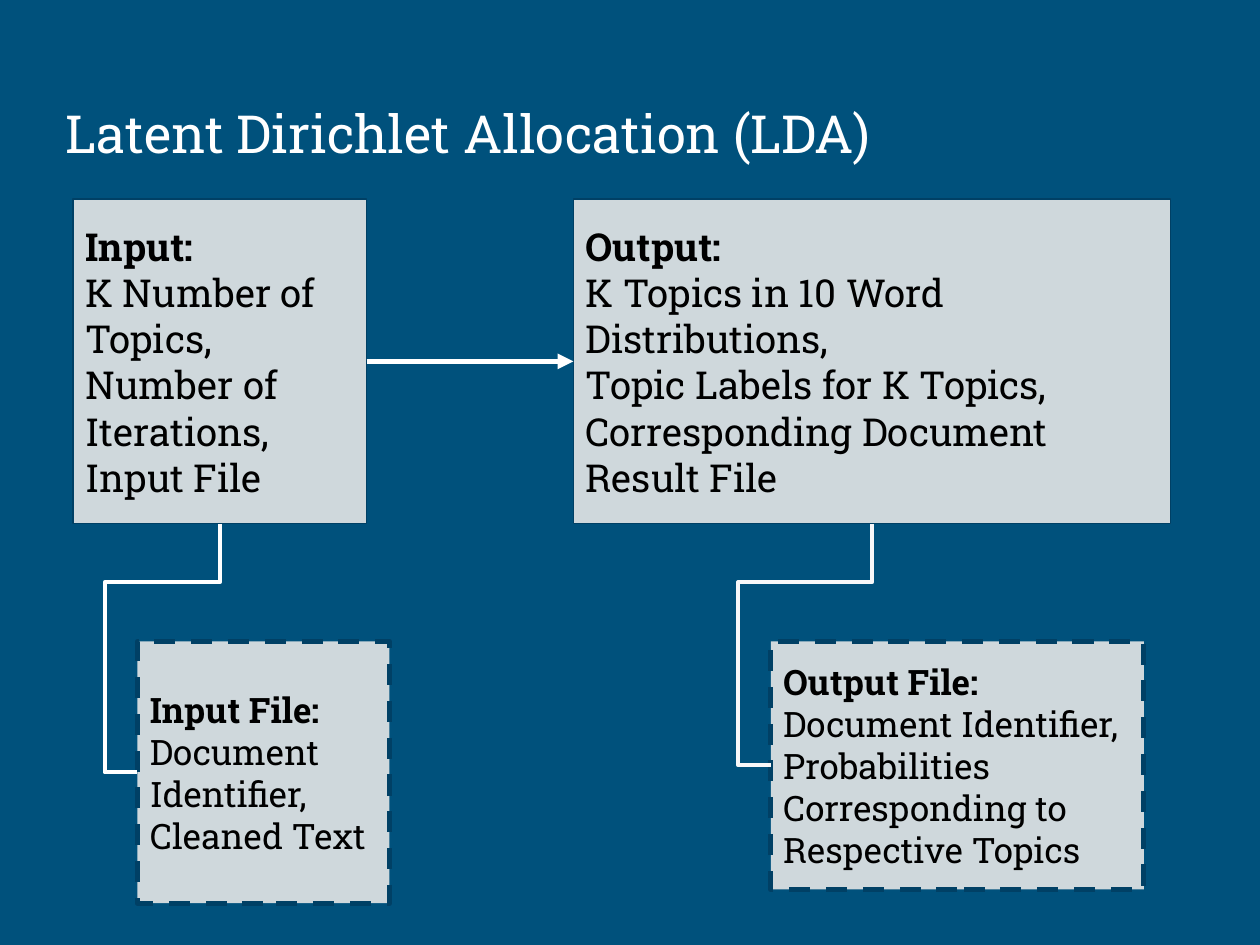
from lxml.etree import SubElement
from pptx import Presentation
from pptx.dml.color import RGBColor
from pptx.enum.dml import MSO_LINE
from pptx.enum.shapes import MSO_CONNECTOR, MSO_SHAPE
from pptx.enum.text import MSO_ANCHOR, MSO_AUTO_SIZE, PP_ALIGN
from pptx.oxml.ns import qn
from pptx.util import Cm, Pt

COLOURS = {
    "background": "00517C",
    "panel": "CFD8DC",
    "border": "004065",
    "text": "000000",
    "white": "FFFFFF",
    "off_white": "F7F7F9",
}
FONT = "Roboto Slab"
BOTTOM, LEFT, RIGHT = 2, 1, 3
ELBOW_DROP, ELBOW_REACH = Cm(1.18), Cm(0.66)
STEP_TOP, STEP_HEIGHT, FILE_TOP = 4.01, 6.55, 12.93


def colour(name):
    """Return the named colour."""
    return RGBColor.from_string(COLOURS[name])


def apply_format(target, values):
    """Set each attribute of the target from a dict of values."""
    for attribute, value in values.items():
        setattr(target, attribute, value)


def format_frame(frame, anchor):
    """Give a text frame its wrapping, margins and anchor."""
    margins = {f"margin_{side}": Cm(0.25) for side in ("left", "top", "right", "bottom")}
    apply_format(frame, {"word_wrap": True, "auto_size": MSO_AUTO_SIZE.NONE,
                         "vertical_anchor": anchor, **margins})


def write_paragraph(paragraph, words, size, ink, bold=False):
    """Write one left-aligned paragraph."""
    paragraph.text = words
    paragraph.alignment = PP_ALIGN.LEFT
    font = paragraph.runs[0].font
    apply_format(font, {"name": FONT, "size": Pt(size), "bold": bold})
    font.color.rgb = colour(ink)


def add_title(slide, words):
    """Place and fill the title placeholder."""
    title = slide.shapes.title
    apply_format(title, {"left": Cm(1.07), "top": Cm(1.02),
                         "width": Cm(23.24), "height": Cm(2.54)})
    format_frame(title.text_frame, MSO_ANCHOR.BOTTOM)
    write_paragraph(title.text_frame.paragraphs[0], words, 30, "white")


def add_panel(slide, box, lines, size, border):
    """Add a panel with a bold heading above its details."""
    panel = slide.shapes.add_shape(MSO_SHAPE.RECTANGLE, *map(Cm, box))
    panel.shadow.inherit = False
    panel.fill.solid()
    panel.fill.fore_color.rgb = colour("panel")
    panel.line.color.rgb = colour("border")
    apply_format(panel.line, border)
    frame = panel.text_frame
    format_frame(frame, MSO_ANCHOR.MIDDLE)
    for index, words in enumerate(lines):
        paragraph = frame.add_paragraph() if index else frame.paragraphs[0]
        write_paragraph(paragraph, words, size, "text", bold=index == 0)
    return panel


def add_link(slide, style, source, source_site, target, target_site, ink, width):
    """Join two panels with a connector."""
    link = slide.shapes.add_connector(style, 0, 0, 0, 0)
    link.begin_connect(source, source_site)
    link.end_connect(target, target_site)
    link.line.color.rgb = colour(ink)
    link.line.width = Pt(width)
    SubElement(link._element.spPr, qn("a:effectLst"))
    return link


def add_arrow(slide, source, target):
    """Add a straight arrow from one panel to the next."""
    arrow = add_link(slide, MSO_CONNECTOR.STRAIGHT, source, RIGHT, target, LEFT, "white", 3)
    SubElement(arrow.line._get_or_add_ln(), qn("a:tailEnd"), type="triangle")


def add_elbow(slide, step, file, ink):
    """Add an elbow from under a step round to the left side of its file."""
    elbow = add_link(slide, MSO_CONNECTOR.ELBOW, step, BOTTOM, file, LEFT, ink, 2.25)
    start_x, start_y = step.left + step.width // 2, step.top + step.height
    end_x, end_y = file.left, file.top + file.height // 2
    drop, shift = end_y - start_y, start_x - end_x
    apply_format(elbow, {"left": (start_x + end_x - drop) // 2,
                         "top": (start_y + end_y - shift) // 2,
                         "width": drop, "height": shift})
    properties = elbow._element.spPr
    apply_format(properties.xfrm, {"rot": 90, "flipH": False, "flipV": False})
    geometry = properties.find(qn("a:prstGeom"))
    geometry.set("prst", "bentConnector4")
    guides = geometry.find(qn("a:avLst"))
    ratios = (ELBOW_DROP / drop, 1 + ELBOW_REACH / shift)
    for number, ratio in enumerate(ratios, start=1):
        SubElement(guides, qn("a:gd"), name=f"adj{number}", fmla=f"val {round(ratio * 100000)}")


def main():
    """Build the slide and save it."""
    deck = Presentation()
    apply_format(deck, {"slide_width": Cm(25.4), "slide_height": Cm(19.05)})
    slide = deck.slides.add_slide(deck.slide_layouts[5])
    slide.background.fill.solid()
    slide.background.fill.fore_color.rgb = colour("background")
    add_title(slide, "Latent Dirichlet Allocation (LDA)")

    solid = {"width": Pt(0.75)}
    dashed = {"width": Pt(3), "dash_style": MSO_LINE.DASH}
    input_step = add_panel(
        slide, (1.47, STEP_TOP, 5.92, STEP_HEIGHT),
        ["Input:", "K Number of Topics, Number of Iterations, Input File"], 22, solid)
    output_step = add_panel(
        slide, (11.56, STEP_TOP, 12.04, STEP_HEIGHT),
        ["Output:", "K Topics in 10 Word Distributions,",
         "Topic Labels for K Topics, Corresponding Document Result File"], 22, solid)
    output_file = add_panel(
        slide, (15.54, FILE_TOP, 7.52, 5),
        ["Output File:",
         "Document Identifier, Probabilities Corresponding to Respective Topics"], 20, dashed)
    input_file = add_panel(
        slide, (2.77, FILE_TOP, 5.08, 5.28),
        ["Input File:", "Document Identifier, Cleaned Text"], 20, dashed)

    add_elbow(slide, input_step, input_file, "white")
    add_elbow(slide, output_step, output_file, "off_white")
    add_arrow(slide, input_step, output_step)
    deck.save("out.pptx")


if __name__ == "__main__":
    main()
